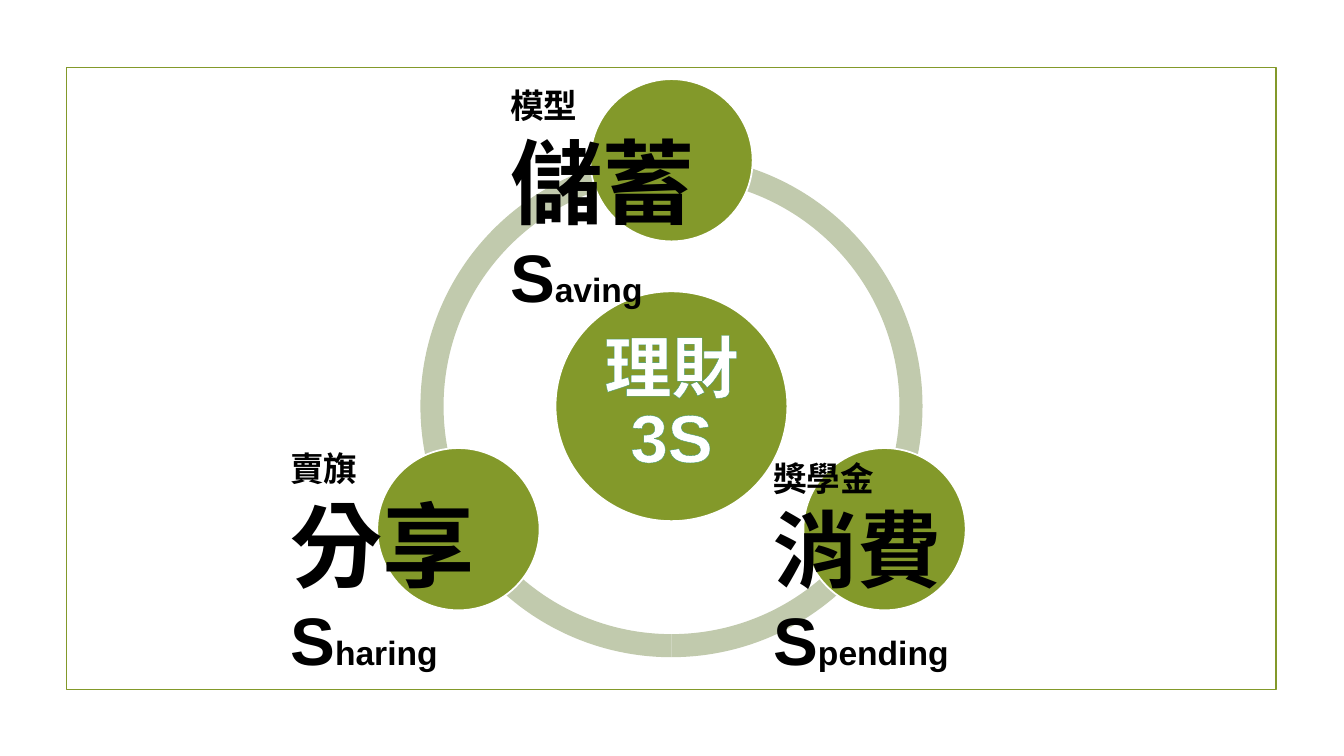
from math import cos, radians, sin

from lxml.etree import SubElement, Element
from pptx import Presentation
from pptx.dml.color import RGBColor
from pptx.enum.shapes import MSO_SHAPE as Shape
from pptx.enum.text import MSO_ANCHOR as Anchor, PP_ALIGN as Align
from pptx.oxml.ns import qn
from pptx.util import Inches, Pt

OLIVE = RGBColor(0x83, 0x99, 0x2A)
SAGE = RGBColor(0xC1, 0xCA, 0xAD)
WHITE = RGBColor(0xFF, 0xFF, 0xFF)
BLACK = RGBColor(0x00, 0x00, 0x00)
TEAL = RGBColor(0x3C, 0x97, 0x70)

HUB_X, HUB_Y = 6.66, 4.03
ORBIT = 2.44
RING = 4.98
SATELLITE = 1.61


class CycleSlide:
    """Draws the elements of a cycle diagram in one style."""

    font_name = "Arial"

    def __init__(self, page):
        self.page = page

    def shape(self, kind, left, top, width, height, fill=None, line=None):
        shape = self.page.shapes.add_shape(
            kind, Inches(left), Inches(top), Inches(width), Inches(height))
        shape.shadow.inherit = False
        if fill is None:
            shape.fill.background()
        else:
            shape.fill.solid()
            shape.fill.fore_color.rgb = fill
        if line is None:
            shape.line.fill.background()
        else:
            shape.line.color.rgb = line
            shape.line.width = Pt(1.25)
        return shape

    def arc(self, start, end):
        arc = self.shape(Shape.BLOCK_ARC, HUB_X - RING / 2, HUB_Y - RING / 2,
                         RING, RING, SAGE)
        for index, value in enumerate((start * 0.6, end * 0.6, 0.046)):
            arc.adjustments[index] = value

    def circle(self, x, y, width, height):
        self.shape(Shape.OVAL, x - width / 2, y - height / 2, width, height, OLIVE, WHITE)

    def box(self, left, top, width, height):
        box = self.page.shapes.add_textbox(
            Inches(left), Inches(top), Inches(width), Inches(height))
        box.text_frame.word_wrap = True
        return box.text_frame

    def style(self, span, size, color):
        span.font.name = self.font_name
        span.font.size = Pt(size)
        span.font.bold = True
        span.font.color.rgb = color
        span.font._rPr.set("lang", "zh-TW")

    def outline(self, span, color, width):
        line = Element(qn("a:ln"), w=str(Pt(width)))
        fill = SubElement(line, qn("a:solidFill"))
        SubElement(fill, qn("a:srgbClr"), val=str(color))
        span.font._rPr.insert(0, line)

    def title(self, text):
        frame = self.box(5.85, 3.22, 1.62, 1.61)
        frame.vertical_anchor = Anchor.MIDDLE
        frame.margin_left = frame.margin_right = Inches(0.07)
        frame.margin_top = frame.margin_bottom = Inches(0.07)
        frame.text = text
        para = frame.paragraphs[0]
        para.alignment = Align.CENTER
        para.line_spacing = Pt(50)
        for span in para.runs:
            self.style(span, 48, WHITE)
            self.outline(span, TEAL, 0.52)

    def label(self, place, example, chinese, english, size):
        frame = self.box(*place)
        frame.text = example
        self.style(frame.paragraphs[0].runs[0], 24, BLACK)
        para = frame.add_paragraph()
        para.text = f"{chinese}\v{english[0]}"
        para.add_run().text = english[1:]
        for span, points in zip(para.runs, (size, 48, 24)):
            self.style(span, points, BLACK)


def main():
    deck = Presentation()
    deck.slide_width, deck.slide_height = Inches(13.33), Inches(7.5)
    cycle = CycleSlide(deck.slides.add_slide(deck.slide_layouts[6]))

    cycle.shape(Shape.RECTANGLE, 0.66, 0.67, 12, 6.17, line=OLIVE)
    for start, end in ((90, 162), (18, 90), (162, 18)):
        cycle.arc(start, end)
    cycle.circle(HUB_X, HUB_Y, 2.3, 2.28)
    cycle.title("理財\v3S")
    for angle in (-90, 30, 150):
        cycle.circle(HUB_X + ORBIT * cos(radians(angle)),
                     HUB_Y + ORBIT * sin(radians(angle)), SATELLITE, SATELLITE)

    cycle.label((4.96, 0.79, 3.42, 1.62), "模型", "儲蓄", "Saving", 66)
    cycle.label((7.57, 4.49, 3.72, 1.51), "獎學金", "消費", "Spending", 60)
    cycle.label((2.78, 4.39, 3.58, 1.62), "賣旗", "分享", "Sharing", 66)
    deck.save("out.pptx")


if __name__ == "__main__":
    main()
